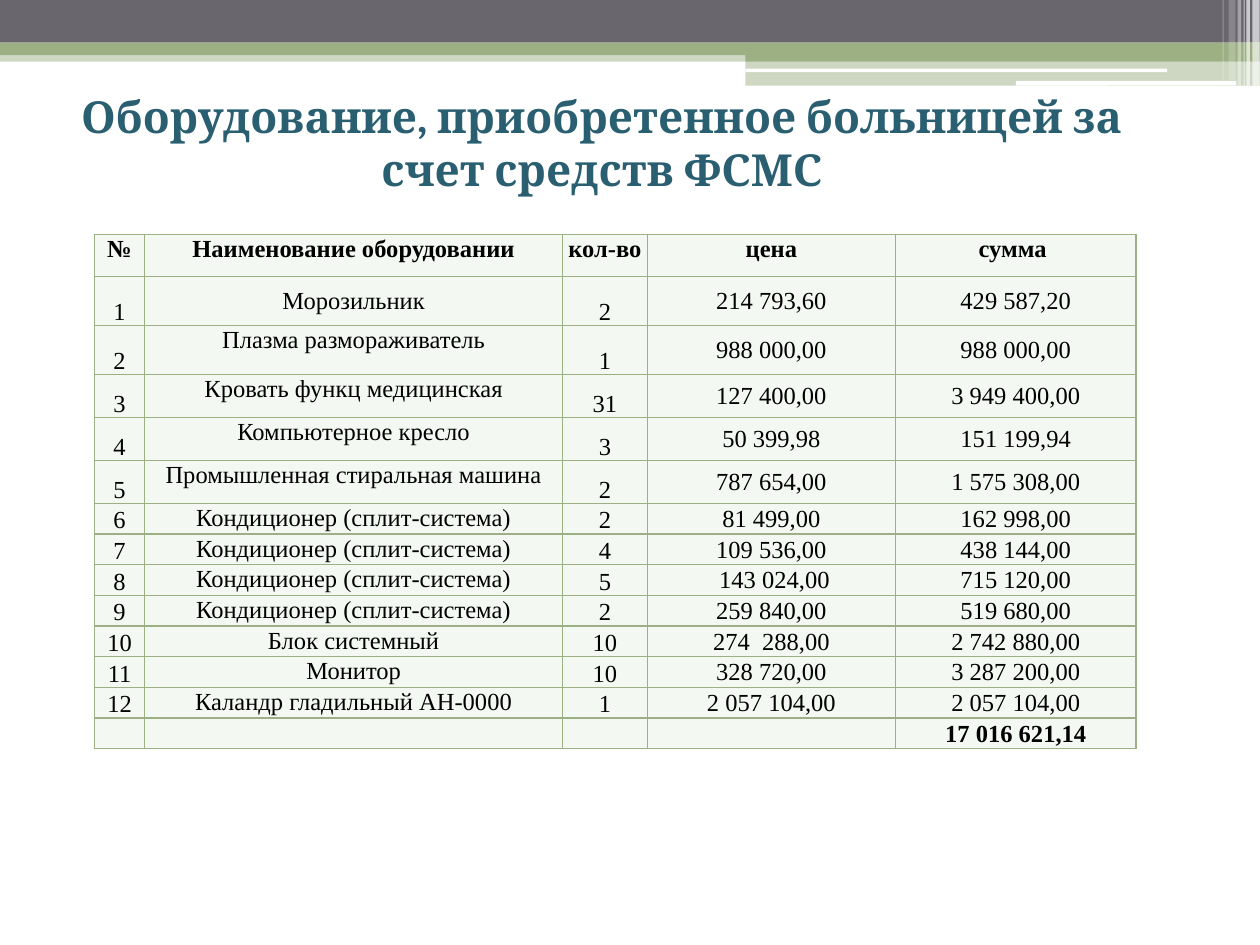
from lxml.etree import SubElement
from pptx import Presentation
from pptx.dml.color import RGBColor
from pptx.enum.shapes import MSO_SHAPE
from pptx.enum.text import MSO_ANCHOR, PP_ALIGN
from pptx.oxml.ns import qn
from pptx.util import Pt

# Content
TITLE = "Оборудование, приобретенное больницей за счет средств ФСМС"
HEADER = ("№", "Наименование оборудовании", "кол-во", "цена", "сумма ")
AIR_CONDITIONER = "Кондиционер (сплит-система)"
EQUIPMENT = [
    ("Морозильник", "2", "214 793,60", "429 587,20"),
    ("Плазма размораживатель", "1", "988 000,00", "988 000,00"),
    ("Кровать функц медицинская", "31", "127 400,00", "3 949 400,00"),
    ("Компьютерное кресло", "3", "50 399,98", "151 199,94"),
    ("Промышленная стиральная машина", "2", "787 654,00", "1 575 308,00"),
    (AIR_CONDITIONER, "2", "81 499,00", "162 998,00"),
    (AIR_CONDITIONER, "4", "109 536,00", "438 144,00"),
    (AIR_CONDITIONER, "5", " 143 024,00", "715 120,00"),
    (AIR_CONDITIONER, "2", "259 840,00", "519 680,00"),
    ("Блок системный", "10", "274  288,00", "2 742 880,00"),
    ("Монитор", "10", "328 720,00", "3 287 200,00"),
    ("Каландр гладильный АН-0000", "1", "2 057 104,00", "2 057 104,00"),
]
TOTAL = ("", "", "", "", "17 016 621,14")

THEME = {
    "dark": "69676D", "green": "9CB084", "white": "FFFFFF",
    "cell": "F4F8F2", "title": "295F71", "text": "000000",
    "title_font": "Cambria", "table_font": "Times New Roman",
    "title_size": 25.2, "table_size": 14, "border": 0.75,
}

# Banner: left, top, width, height, colour, opacity in percent
WIDTH, HEIGHT = 720, 540
SPLIT = 426
BANDS = [
    (0, 28.8, WIDTH, 6.5, "green", 50),
    (0, 0, WIDTH, 24.4, "dark", 100),
    (0, 24.4, WIDTH, 7.2, "green", 100),
    (SPLIT, 28.1, WIDTH - SPLIT, 7.2, "green", 100),
    (SPLIT, 35.3, WIDTH - SPLIT, 13.7, "green", 50),
]
ROUNDED_BARS = [
    (SPLIT, 39.2, 241, 2, "white", 100),
    (580.5, 46.3, 126, 2.6, "white", 100),
]
# Vertical stripes: left, width, height, opacity
STRIPES = [
    (715.7, 4.2, 49, 65), (712.2, 2, 49, 65), (710.6, 0.7, 49, 60),
    (707.2, 2, 49, 40), (702, 4, 46, 20), (698.6, 0.7, 46, 30),
]

# Table geometry and vertical alignment per column
TABLE_LEFT, TABLE_TOP = 54, 134
COLUMN_WIDTHS = (28.7, 238.8, 48.4, 141.9, 137.4)
ROW_HEIGHTS = [24] + [28] * 2 + [24.6] * 3 + [17.5] * 8
TOP, MIDDLE, BOTTOM = MSO_ANCHOR.TOP, MSO_ANCHOR.MIDDLE, MSO_ANCHOR.BOTTOM
HEADER_ANCHORS = (TOP,) * 5
FIRST_ITEM_ANCHORS = (BOTTOM, MIDDLE, BOTTOM, MIDDLE, MIDDLE)
ITEM_ANCHORS = (BOTTOM, TOP, BOTTOM, MIDDLE, MIDDLE)
ROW_ANCHORS = {0: HEADER_ANCHORS, 1: FIRST_ITEM_ANCHORS}


def colour(name):
    return RGBColor.from_string(THEME[name])


def set_attributes(target, values):
    for name, value in values.items():
        setattr(target, name, value)


def add_block(slide, kind, left, top, width, height, fill, opacity):
    shape = slide.shapes.add_shape(kind, Pt(left), Pt(top), Pt(width), Pt(height))
    shape.shadow.inherit = False
    shape.line.fill.background()
    shape.fill.solid()
    shape.fill.fore_color.rgb = colour(fill)
    if opacity < 100:
        rgb = shape.fill._xPr.find(".//" + qn("a:srgbClr"))
        SubElement(rgb, qn("a:alpha"), val=str(opacity * 1000))


def write(paragraph, text, font, size, color, bold):
    paragraph.alignment = PP_ALIGN.CENTER
    if not text:  # keeps an empty cell as low as the filled ones
        paragraph._p.get_or_add_endParaRPr().set("sz", str(int(size * 100)))
        return
    run = paragraph.add_run()
    run.text = text
    set_attributes(run.font, {"name": font, "size": Pt(size), "bold": bold})
    run.font.color.rgb = colour(color)


def add_borders(cell):
    properties = cell._tc.get_or_add_tcPr()
    for side in ("lnL", "lnR", "lnT", "lnB"):
        line = SubElement(properties, qn(f"a:{side}"), w=str(Pt(THEME["border"])))
        fill = SubElement(line, qn("a:solidFill"))
        SubElement(fill, qn("a:srgbClr"), val=THEME["green"])


def add_banner(slide):
    for band in BANDS:
        add_block(slide, MSO_SHAPE.RECTANGLE, *band)
    for bar in ROUNDED_BARS:
        add_block(slide, MSO_SHAPE.ROUNDED_RECTANGLE, *bar)
    for left, width, height, opacity in STRIPES:
        add_block(slide, MSO_SHAPE.RECTANGLE, left, 0, width, height, "white", opacity)


def add_title(slide):
    frame = slide.shapes.add_textbox(Pt(20), Pt(54.7), Pt(648), Pt(84)).text_frame
    set_attributes(frame, {
        "word_wrap": True, "vertical_anchor": MIDDLE,
        "margin_top": 0, "margin_bottom": Pt(31),
    })
    write(frame.paragraphs[0], TITLE, THEME["title_font"], THEME["title_size"],
          "title", True)


def add_equipment_table(slide):
    rows = [HEADER]
    rows += [(str(number), *item) for number, item in enumerate(EQUIPMENT, 1)]
    rows.append(TOTAL)
    table = slide.shapes.add_table(
        len(rows), len(HEADER), Pt(TABLE_LEFT), Pt(TABLE_TOP),
        Pt(sum(COLUMN_WIDTHS)), Pt(sum(ROW_HEIGHTS))).table
    for column, width in zip(table.columns, COLUMN_WIDTHS):
        column.width = Pt(width)
    for row, height in zip(table.rows, ROW_HEIGHTS):
        row.height = Pt(height)
    for r, values in enumerate(rows):
        bold = r in (0, len(rows) - 1)
        anchors = ROW_ANCHORS.get(r, ITEM_ANCHORS)
        for c, text in enumerate(values):
            cell = table.cell(r, c)
            set_attributes(cell, {
                "margin_left": Pt(0.7), "margin_right": Pt(0.7),
                "margin_top": Pt(0.7), "margin_bottom": 0,
                "vertical_anchor": anchors[c],
            })
            add_borders(cell)
            cell.fill.solid()
            cell.fill.fore_color.rgb = colour("cell")
            write(cell.text_frame.paragraphs[0], text, THEME["table_font"],
                  THEME["table_size"], "text", bold)


def main():
    presentation = Presentation()
    set_attributes(presentation, {"slide_width": Pt(WIDTH), "slide_height": Pt(HEIGHT)})
    slide = presentation.slides.add_slide(presentation.slide_layouts[6])
    add_banner(slide)
    add_title(slide)
    add_equipment_table(slide)
    presentation.save("out.pptx")


if __name__ == "__main__":
    main()
